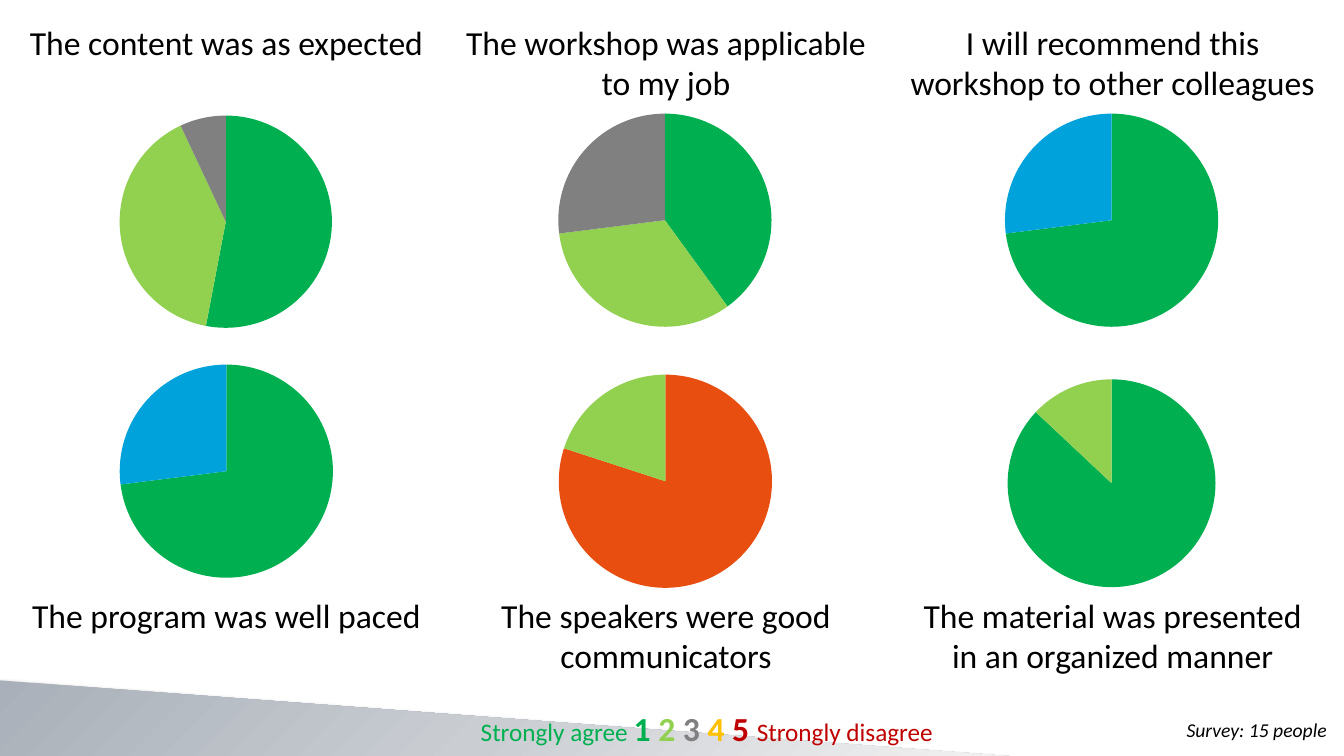
from dataclasses import dataclass

from lxml import etree
from pptx import Presentation
from pptx.chart.data import CategoryChartData
from pptx.dml.color import RGBColor
from pptx.enum.chart import XL_CHART_TYPE
from pptx.enum.shapes import MSO_SHAPE
from pptx.enum.text import MSO_ANCHOR, PP_ALIGN
from pptx.oxml import parse_xml
from pptx.oxml.ns import nsdecls, qn
from pptx.util import Inches, Pt

PIE = XL_CHART_TYPE.PIE
TRIANGLE = MSO_SHAPE.RIGHT_TRIANGLE
TOP = MSO_ANCHOR.TOP
LEFT, CENTER = PP_ALIGN.LEFT, PP_ALIGN.CENTER


@dataclass(frozen=True)
class Theme:
    font: str = "Calibri"
    chart_font: str = "Cambria"
    question: int = 24
    score: int = 24
    scale: int = 18
    note: int = 14
    chart: int = 10
    black: str = "000000"
    white: str = "FFFFFF"
    green: str = "00B050"
    lime: str = "92D050"
    gray: str = "808080"
    amber: str = "FFC000"
    red: str = "C00000"
    orange: str = "E84E10"
    blue: str = "00A2DB"
    navy: str = "001C3D"
    salmon: str = "F3A687"
    sky: str = "7FD0ED"
    wedge: tuple = ((0, "A9B0B9"), (50, "CACED3"), (100, "F2F2F2"))


T = Theme()
RATINGS = ("1", "2", "3", "4", "5")
PIE_SHARE = 0.885
COLUMNS = (0.14, 4.5, 8.93)
ROWS = (0.17, 5.85)
QUESTION_SIZE = (4.21, 0.83)

SURVEY = (
    (
        ("The content was as expected", (0.4, 1.01, 3.68, 2.38),
         (53, 40, 7, 0, 0), (T.green, T.lime, T.gray)),
        ("The workshop was applicable to my job", (4.47, 0.99, 4.25, 2.39),
         (40, 33, 27, 0, 0), (T.green, T.lime, T.gray)),
        ("I will recommend this workshop to other colleagues", (8.9, 0.99, 4.25, 2.39),
         (73, 27, 0, 0, 0), (T.green, T.blue, T.navy)),
    ),
    (
        ("The program was well paced", (0.12, 3.48, 4.25, 2.39),
         (73, 27, 0, 0, 0), (T.green, T.blue, T.navy)),
        ("The speakers were good communicators", (4.51, 3.58, 4.18, 2.39),
         (80, 20, 0, 0, 0), (T.orange, T.lime, T.navy)),
        ("The material was presented in an organized manner", (8.72, 3.63, 4.61, 2.33),
         (87, 13, 0, 0, 0), (T.green, T.lime, T.navy)),
    ),
)


def rgb(value):
    return RGBColor.from_string(value)


def set_font(font, color, **values):
    for name, value in values.items():
        setattr(font, name, value)
    font.color.rgb = rgb(color)


def add_text(s, box, runs, align=LEFT, wrap=False):
    tf = s.shapes.add_textbox(*map(Inches, box)).text_frame
    side = Inches(0.08 if wrap else 0.1)
    frame = {"word_wrap": wrap, "vertical_anchor": TOP,
             "margin_left": side, "margin_right": side}
    for name, value in frame.items():
        setattr(tf, name, value)
    p = tf.paragraphs[0]
    p.alignment = align
    for text, size, color, style in runs:
        r = p.add_run()
        r.text = text
        set_font(r.font, color, name=T.font, size=Pt(size), **style)


def add_wedge(s, box):
    sp = s.shapes.add_shape(TRIANGLE, *map(Inches, box))
    sp.line.fill.background()
    stops = "".join(
        f'<a:gs pos="{pos * 1000}"><a:srgbClr val="{color}"/></a:gs>'
        for pos, color in T.wedge)
    gradient = parse_xml(
        f'<a:gradFill {nsdecls("a")} rotWithShape="1"><a:gsLst>{stops}</a:gsLst>'
        '<a:lin ang="2700000" scaled="0"/></a:gradFill>')
    shadow = parse_xml(
        f'<a:effectLst {nsdecls("a")}><a:outerShdw blurRad="{Pt(4)}" dist="{Pt(2)}" '
        f'dir="5400000" rotWithShape="0"><a:srgbClr val="{T.black}">'
        '<a:alpha val="46000"/></a:srgbClr></a:outerShdw></a:effectLst>')
    line = sp.line._get_or_add_ln()
    line.addprevious(gradient)
    line.addnext(shadow)


def center_pie(chart, width, height):
    area = chart._chartSpace.chart.plotArea
    for old in area.findall(qn("c:layout")):
        area.remove(old)
    layout = etree.Element(qn("c:layout"))
    manual = etree.SubElement(layout, qn("c:manualLayout"))
    w, h = PIE_SHARE * height / width, PIE_SHARE
    settings = {"layoutTarget": "inner", "xMode": "edge", "yMode": "edge",
                "x": (1 - w) / 2, "y": (1 - h) / 2, "w": w, "h": h}
    for name, value in settings.items():
        text = value if isinstance(value, str) else f"{value:.4f}"
        etree.SubElement(manual, qn(f"c:{name}")).set("val", text)
    area.insert(0, layout)


def add_pie(s, box, values, colors):
    data = CategoryChartData()
    data.categories = RATINGS
    data.add_series("Series 1", values)
    chart = s.shapes.add_chart(PIE, *map(Inches, box), data).chart
    chart.has_legend = False
    chart.has_title = False
    set_font(chart.font, T.navy, name=T.chart_font, size=Pt(T.chart))
    plot = chart.plots[0]
    plot.vary_by_categories = True
    for i, color in enumerate(colors + (T.salmon, T.sky)):
        point = plot.series[0].points[i].format
        point.fill.solid()
        point.fill.fore_color.rgb = rgb(color)
        point.line.fill.background()
    center_pie(chart, box[2], box[3])


def add_survey(s):
    for top, questions in zip(ROWS, SURVEY):
        for left, (question, box, values, colors) in zip(COLUMNS, questions):
            add_pie(s, box, values, colors)
            add_text(s, (left, top, *QUESTION_SIZE),
                     [(question, T.question, T.black, {})], CENTER, True)


def add_scale(s, box):
    colors = (T.green, T.lime, T.gray, T.amber, T.red)
    scores = [(f"{rating} ", T.score, color, {"bold": True})
              for rating, color in zip(RATINGS, colors)]
    add_text(s, box, [
        ("Strongly agree ", T.scale, T.green, {}),
        *scores,
        ("Strongly disagree", T.scale, T.red, {}),
    ])


def add_note(s, box):
    add_text(s, box, [("Survey: 15 people", T.note, T.black, {"italic": True})])


def main():
    prs = Presentation()
    prs.slide_width, prs.slide_height = Inches(13.33), Inches(7.5)
    s = prs.slides.add_slide(prs.slide_layouts[6])
    s.background.fill.solid()
    s.background.fill.fore_color.rgb = rgb(T.white)
    add_wedge(s, (0, 6.75, 10, 0.75))
    add_survey(s)
    add_scale(s, (4.67, 6.97, 4.73, 0.5))
    add_note(s, (11.67, 7.07, 1.6, 0.34))
    prs.save("out.pptx")


if __name__ == "__main__":
    main()
